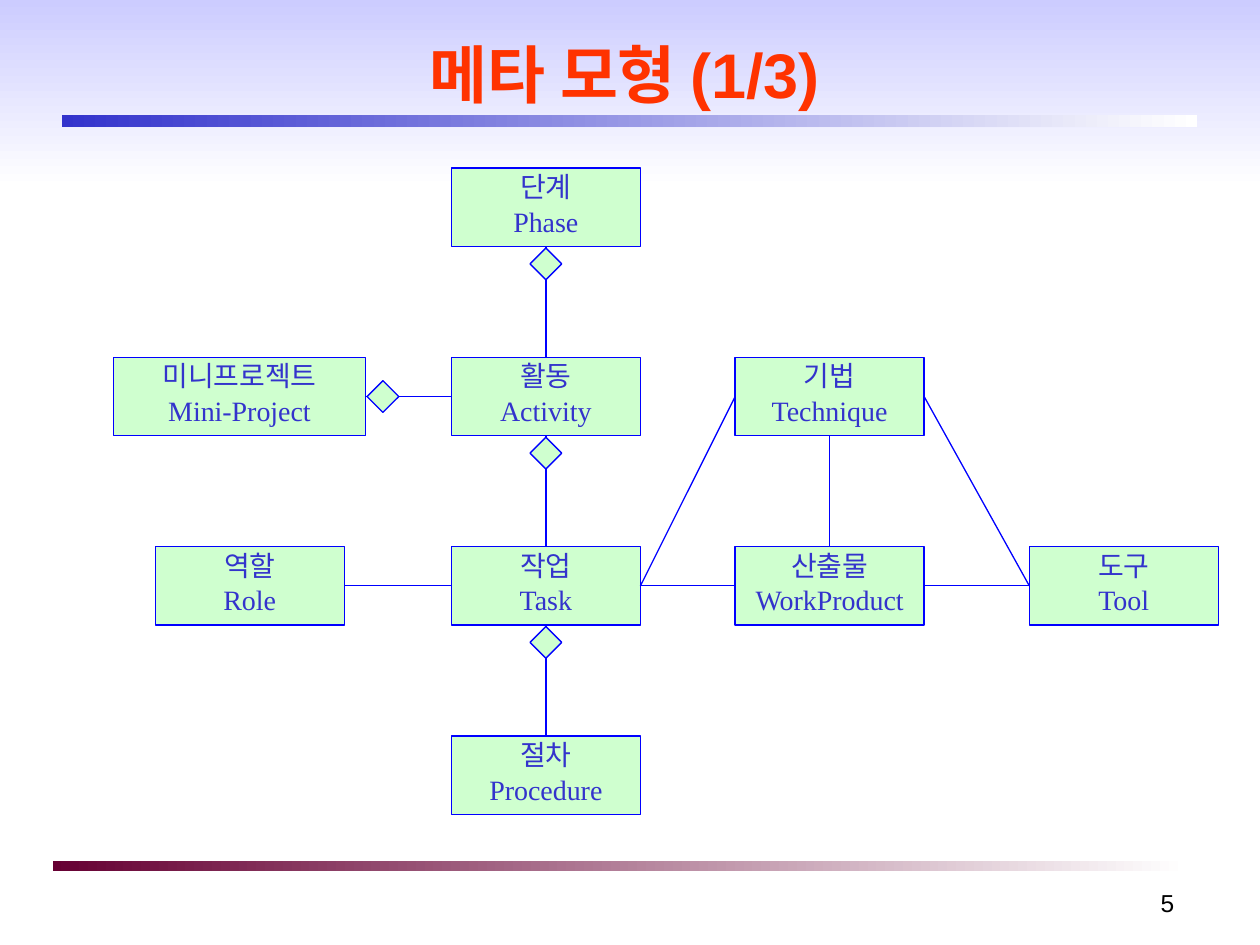
import pptx
import pptx.util
import pptx.dml.color
import pptx.enum.shapes
import pptx.enum.text
import pptx.oxml.ns
import lxml.etree

Cm, Pt = pptx.util.Cm, pptx.util.Pt
Shape = pptx.enum.shapes.MSO_SHAPE
Align = pptx.enum.text.PP_ALIGN
Anchor = pptx.enum.text.MSO_ANCHOR

TOP, LEFT, BOTTOM, RIGHT = range(4)
ROW, STEP, HIGH, WIDE = 3.39, 3.815, 1.58, 3.81
GEM = 0.64

BOXES = [
    ("단계", "Phase", 9.1, 0, WIDE),
    ("활동", "Activity", 9.1, 1, WIDE),
    ("작업", "Task", 9.1, 2, WIDE),
    ("절차", "Procedure", 9.1, 3, WIDE),
    ("역할", "Role", 3.13, 2, WIDE),
    ("기법", "Technique", 14.82, 1, WIDE),
    ("도구", "Tool", 20.75, 2, WIDE),
    ("산출물", "WorkProduct", 14.82, 2, WIDE),
    ("미니프로젝트", "Mini-Project", 2.29, 1, 5.08),
]
LINKS = [
    ("Role", RIGHT, "Task", LEFT),
    ("Task", RIGHT, "Technique", LEFT),
    ("Technique", RIGHT, "Tool", LEFT),
    ("Task", RIGHT, "WorkProduct", LEFT),
    ("Technique", BOTTOM, "WorkProduct", TOP),
    ("WorkProduct", RIGHT, "Tool", LEFT),
]
OWNS = [
    ("Phase", BOTTOM, "Activity", TOP),
    ("Activity", BOTTOM, "Task", TOP),
    ("Task", BOTTOM, "Procedure", TOP),
    ("Mini-Project", RIGHT, "Activity", LEFT),
]


def color(code):
    return pptx.dml.color.RGBColor.from_string(code)


def add_bar(slide, x, y, w, h, start, angle=0):
    bar = slide.shapes.add_shape(Shape.RECTANGLE, Cm(x), Cm(y), Cm(w), Cm(h))
    bar.shadow.inherit = False
    bar.line.fill.background()
    bar.fill.gradient()
    bar.fill.gradient_angle = angle
    for stop, place, code in zip(bar.fill.gradient_stops, (0, 1), (start, "FFFFFF")):
        stop.position = place
        stop.color.rgb = color(code)


def style(para, size, font, code, align, bold=False):
    para.alignment = align
    para.font.size = Pt(size)
    para.font.name = font
    para.font.bold = bold
    para.font.color.rgb = color(code)


def add_text(slide, text, x, y, w, h, anchor, *look):
    frame = slide.shapes.add_textbox(Cm(x), Cm(y), Cm(w), Cm(h)).text_frame
    frame.word_wrap = True
    frame.vertical_anchor = anchor
    frame.text = text
    style(frame.paragraphs[0], *look)


def add_solid(slide, kind, x, y, w, h):
    shape = slide.shapes.add_shape(kind, x, y, w, h)
    shape.shadow.inherit = False
    shape.fill.solid()
    shape.fill.fore_color.rgb = color("CFFFCF")
    shape.line.color.rgb = color("0000FF")
    shape.line.width = Pt(0.75)
    return shape


def add_box(slide, local, name, x, row, w):
    box = add_solid(slide, Shape.RECTANGLE, Cm(x), Cm(ROW + row * STEP), Cm(w), Cm(HIGH))
    frame = box.text_frame
    frame.word_wrap = True
    frame.vertical_anchor = Anchor.TOP
    frame.margin_top, frame.margin_bottom = Cm(0.03), 0
    frame.text = f"{local}\n{name}"
    for para in frame.paragraphs:
        style(para, 16, "Times New Roman", "3333CC", Align.CENTER)
    para.line_spacing = 0.4
    para.space_before = Pt(10.5)
    return box


def add_link(slide, boxes, start, side, end, other):
    link = slide.shapes.add_connector(pptx.enum.shapes.MSO_CONNECTOR.STRAIGHT, 0, 0, 0, 0)
    link.begin_connect(boxes[start], side)
    link.end_connect(boxes[end], other)
    link.line.color.rgb = color("0000FF")
    link.line.width = Pt(0.75)
    lxml.etree.SubElement(link.element.spPr, pptx.oxml.ns.qn("a:effectLst"))
    return link


def add_gem(slide, link, side):
    x, y, half, gap = link.begin_x, link.begin_y, Cm(GEM / 2), Cm(0.03)
    if side == BOTTOM:
        x, y = x - half, y + gap
    else:
        x, y = x + gap, y - half
    add_solid(slide, Shape.DIAMOND, x, y, Cm(GEM), Cm(GEM))


def main():
    deck = pptx.Presentation()
    deck.slide_width, deck.slide_height = Cm(25.4), Cm(19.05)
    slide = deck.slides.add_slide(deck.slide_layouts[6])
    add_bar(slide, 0, 0, 25.4, 3.81, "CCCCFF", 270)
    add_bar(slide, 1.06, 17.36, 22.86, 0.2, "660033")
    add_bar(slide, 1.25, 2.32, 22.88, 0.24, "3333CC")
    add_text(slide, "5", 18.63, 17.78, 5.29, 1.27, Anchor.TOP,
             14, "Arial", "000000", Align.RIGHT)
    add_text(slide, "메타 모형 (1/3)", 1.27, 0.85, 22.65, 1.27, Anchor.MIDDLE,
             36, "Arial", "FF3300", Align.CENTER, True)
    boxes = {box[1]: add_box(slide, *box) for box in BOXES}
    for link in LINKS:
        add_link(slide, boxes, *link)
    for own in OWNS:
        add_gem(slide, add_link(slide, boxes, *own), own[1])
    deck.save("out.pptx")


if __name__ == "__main__":
    main()
